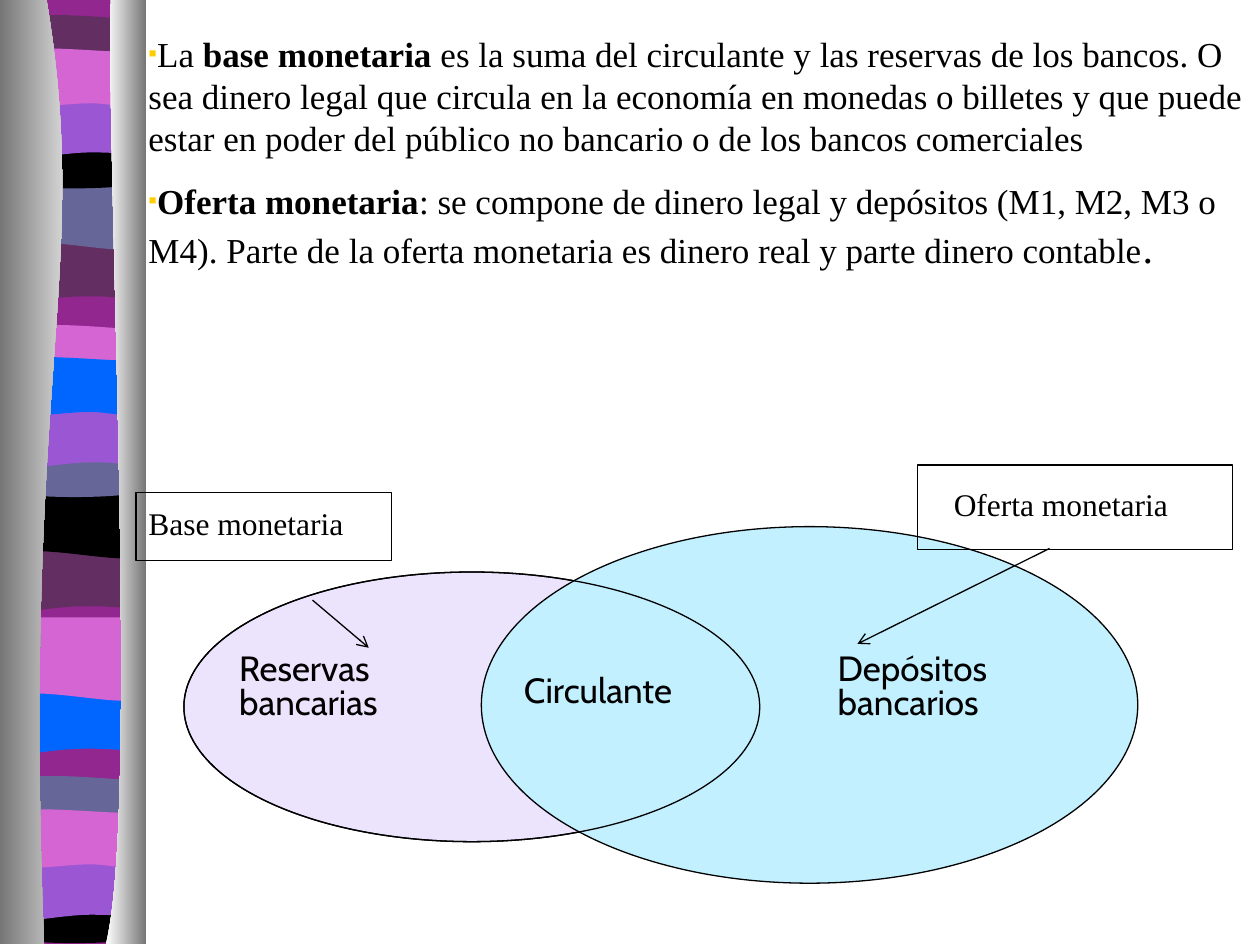
"""Build a slide on the monetary base and the money supply with a Venn diagram."""
import lxml.etree
import pptx
import pptx.dml.color
import pptx.enum.shapes
import pptx.enum.text
import pptx.oxml.ns
import pptx.util

Inches = pptx.util.Inches
Pt = pptx.util.Pt
RGBColor = pptx.dml.color.RGBColor
SHAPES = pptx.enum.shapes.MSO_SHAPE
qn = pptx.oxml.ns.qn

BLACK = RGBColor(0, 0, 0)
WHITE = RGBColor(255, 255, 255)
PURPLE = RGBColor(0x92, 0x27, 0x8F)
PLUM = RGBColor(0x63, 0x2E, 0x62)
SLATE = RGBColor(0x66, 0x66, 0x99)
VIOLET = RGBColor(0x9B, 0x57, 0xD3)
PINK = RGBColor(0xD5, 0x65, 0xD2)
BLUE = RGBColor(0x00, 0x66, 0xFF)
GREY = RGBColor(0x76, 0x76, 0x76)
LILAC = RGBColor(0xEC, 0xE3, 0xFC)
SKY = RGBColor(0xC2, 0xF0, 0xFF)
SERIF = "Times New Roman"

presentation = pptx.Presentation()
presentation.slide_width = Inches(10)
presentation.slide_height = Inches(7.5)
slide = presentation.slides.add_slide(presentation.slide_layouts[6])


def add_outline(segments, top=0):
    """Draw a closed outline from one-point lines and three-point cubic curves."""
    points = [(Inches(x), Inches(y + top)) for segment in segments for x, y in segment]
    builder = slide.shapes.build_freeform(*points[0])
    builder.add_line_segments(points[1:], close=True)
    shape = builder.convert_to_shape()
    lines = iter(list(shape._element.iter(qn("a:lnTo"))))
    for segment in segments[1:]:
        pieces = [next(lines) for _ in segment]
        if len(pieces) == 3:
            curve = lxml.etree.Element(qn("a:cubicBezTo"))
            pieces[0].addprevious(curve)
            for piece in pieces:
                curve.append(piece[0])
                piece.getparent().remove(piece)
    shape.shadow.inherit = False
    shape.line.fill.background()
    return shape


def style_text(paragraph, size, font_name):
    """Set the font and the spacing of a label."""
    paragraph.font.size = Pt(size)
    paragraph.font.name = font_name
    paragraph.font.color.rgb = BLACK
    paragraph.alignment = pptx.enum.text.PP_ALIGN.LEFT
    paragraph.line_spacing = 0.8


LEFT, RIGHT = 0.05, 1.14
WAVE_DOWN = [[(RIGHT, -0.05)], [(RIGHT, 0.53)],
             [(0.39, 0.44), (0.24, 0.6), (LEFT, 0.53)], [(LEFT, -0.05)]]
WAVE_UP = [[(RIGHT, -0.09)], [(RIGHT, 0.55)],
           [(0.96, 0.63), (0.39, 0.46), (LEFT, 0.53)], [(LEFT, -0.09)]]
LENS = [[(RIGHT, -0.05)], [(RIGHT, 0.29)], [(0.95, 0.34), (0.23, 0.34), (LEFT, 0.29)],
        [(LEFT, -0.05)], [(0.12, -0.1), (0.28, -0.09), (0.46, -0.09)],
        [(0.64, -0.09), (0.99, -0.06), (RIGHT, -0.05)]]
BOWL = [[(RIGHT, -0.05)], [(RIGHT, 0.37)], [(0.95, 0.43), (0.23, 0.43), (LEFT, 0.37)],
        [(LEFT, -0.05)], [(0.71, 0), (0.9, -0.05), (RIGHT, -0.05)]]
ARCH = [[(RIGHT, -0.05)], [(RIGHT, 0.53)], [(0.96, 0.47), (0.89, 0.47), (0.71, 0.47)],
        [(0.53, 0.47), (0.21, 0.53), (LEFT, 0.53)], [(LEFT, -0.05)]]
RIPPLE = [[(RIGHT, -0.05)], [(RIGHT, 0.37)], [(1.06, 0.42), (0.89, 0.36), (0.71, 0.36)],
          [(0.53, 0.36), (0.16, 0.42), (LEFT, 0.37)], [(LEFT, -0.05)],
          [(0.2, -0.11), (0.78, -0.05), (0.96, -0.05)]]
BACKING = [[(RIGHT, 0)], [(RIGHT, 7.49)], [(LEFT, 7.49)], [(LEFT, 0)]]

bands = [
    (BACKING, 0, PURPLE),
    (WAVE_DOWN, 1.85, PLUM), (WAVE_UP, 1.41, SLATE), (LENS, 0.21, PLUM),
    (BOWL, 1.08, BLACK), (ARCH, 0.74, VIOLET), (RIPPLE, 0.46, PINK),
    (WAVE_DOWN, 4.31, PLUM), (WAVE_UP, 3.86, BLACK), (LENS, 2.67, PINK),
    (BOWL, 3.53, SLATE), (ARCH, 3.2, VIOLET), (RIPPLE, 2.91, BLUE),
    (WAVE_DOWN, 5.44, BLUE), (WAVE_UP, 4.99, PINK), (LENS, 6.25, SLATE),
    (BOWL, 7.07, BLACK), (ARCH, 6.79, VIOLET), (RIPPLE, 6.5, PINK),
]
for segments, top, color in bands:
    band = add_outline(segments, top)
    band.fill.solid()
    band.fill.fore_color.rgb = color

left_column = [[(0.37, 0)], [(0.73, 2.16), (0.17, 2.96), (0.35, 7.49)],
               [(0, 7.49)], [(0, 0)]]
right_column = [[(0.88, 0)], [(0.84, 1.25), (1.11, 6.46), (0.84, 7.49)],
                [(1.16, 7.49)], [(1.16, 0)]]
for segments, *colors in ((left_column, GREY, WHITE), (right_column, WHITE, GREY)):
    column = add_outline(segments)
    column.fill.gradient()
    column.fill.gradient_angle = 0
    for stop, color in zip(column.fill.gradient_stops, colors):
        stop.color.rgb = color

definitions = [
    [("La ", False, 20), ("base monetaria", True, 20),
     (" es la suma del circulante y las reservas de los bancos. O sea dinero legal que "
      "circula en la economía en monedas o billetes y que puede estar en poder del "
      "público no bancario o de los bancos comerciales", False, 20)],
    [("Oferta monetaria", True, 20),
     (": se compone de dinero legal y depósitos (M1, M2, M3 o M4). Parte de la oferta "
      "monetaria es dinero real y parte dinero contable", False, 20), (".", False, 24)],
]
text_box = slide.shapes.add_textbox(Inches(1.08), Inches(0.21), Inches(8.92), Inches(2.69))
frame = text_box.text_frame
frame.word_wrap = True
for index, runs in enumerate(definitions):
    paragraph = frame.add_paragraph() if index else frame.paragraphs[0]
    paragraph.space_before = Pt(12)
    paragraph.font.name = SERIF
    paragraph.font.color.rgb = BLACK
    properties = paragraph._p.get_or_add_pPr()
    bullet = lxml.etree.fromstring(
        f'<a:bullet {pptx.oxml.ns.nsdecls("a")}><a:buClr><a:srgbClr val="FFCC00"/></a:buClr>'
        f'<a:buSzPct val="70000"/><a:buFont typeface="{SERIF}"/><a:buChar char="▪"/></a:bullet>')
    default_font = properties.find(qn("a:defRPr"))
    for element in list(bullet):
        default_font.addprevious(element)
    for text, bold, size in runs:
        run = paragraph.add_run()
        run.text = text
        run.font.bold = bold
        run.font.size = Pt(size)

base_place = (1.46, 4.54, 4.57, 2.14)
supply_place = (3.82, 4.18, 5.21, 2.83)
for place, color in ((base_place, LILAC), (supply_place, SKY), (base_place, None)):
    ellipse = slide.shapes.add_shape(SHAPES.OVAL, *map(Inches, place))
    ellipse.shadow.inherit = False
    ellipse.line.color.rgb = BLACK
    ellipse.line.width = Pt(0.75)
    if color is None:
        ellipse.fill.background()
    else:
        ellipse.fill.solid()
        ellipse.fill.fore_color.rgb = color

for text, *place in (("Circulante", 4.06, 5.32, 1.68, 0.37),
                     ("Depósitos bancarios", 6.55, 5.15, 1.92, 0.64),
                     ("Reservas bancarias", 1.8, 5.15, 1.6, 0.64)):
    label = slide.shapes.add_textbox(*map(Inches, place))
    label.text_frame.word_wrap = True
    label.text_frame.text = text
    style_text(label.text_frame.paragraphs[0], 20, "Cabin")

callouts = [
    ("Oferta monetaria", (7.28, 3.69, 2.5, 0.67), (0.99, 0.42, 2.12, -0.19), 0.29),
    ("Base monetaria", (1.08, 3.91, 2.03, 0.54), (1.58, 0.69, 2.28, 0.91), 0.1),
]
for text, place, adjustments, margin in callouts:
    callout = slide.shapes.add_shape(SHAPES.LINE_CALLOUT_1, *map(Inches, place))
    for index, value in enumerate(adjustments):
        callout.adjustments[index] = value
    callout.shadow.inherit = False
    callout.fill.background()
    callout.line.color.rgb = BLACK
    callout.line.width = Pt(0.75)
    arrowhead = lxml.etree.SubElement(callout.line._get_or_add_ln(), qn("a:tailEnd"))
    arrowhead.set("type", "arrow")
    callout.text_frame.margin_left = Inches(margin)
    callout.text_frame.vertical_anchor = pptx.enum.text.MSO_ANCHOR.MIDDLE
    callout.text_frame.text = text
    style_text(callout.text_frame.paragraphs[0], 18, SERIF)

presentation.save("out.pptx")
